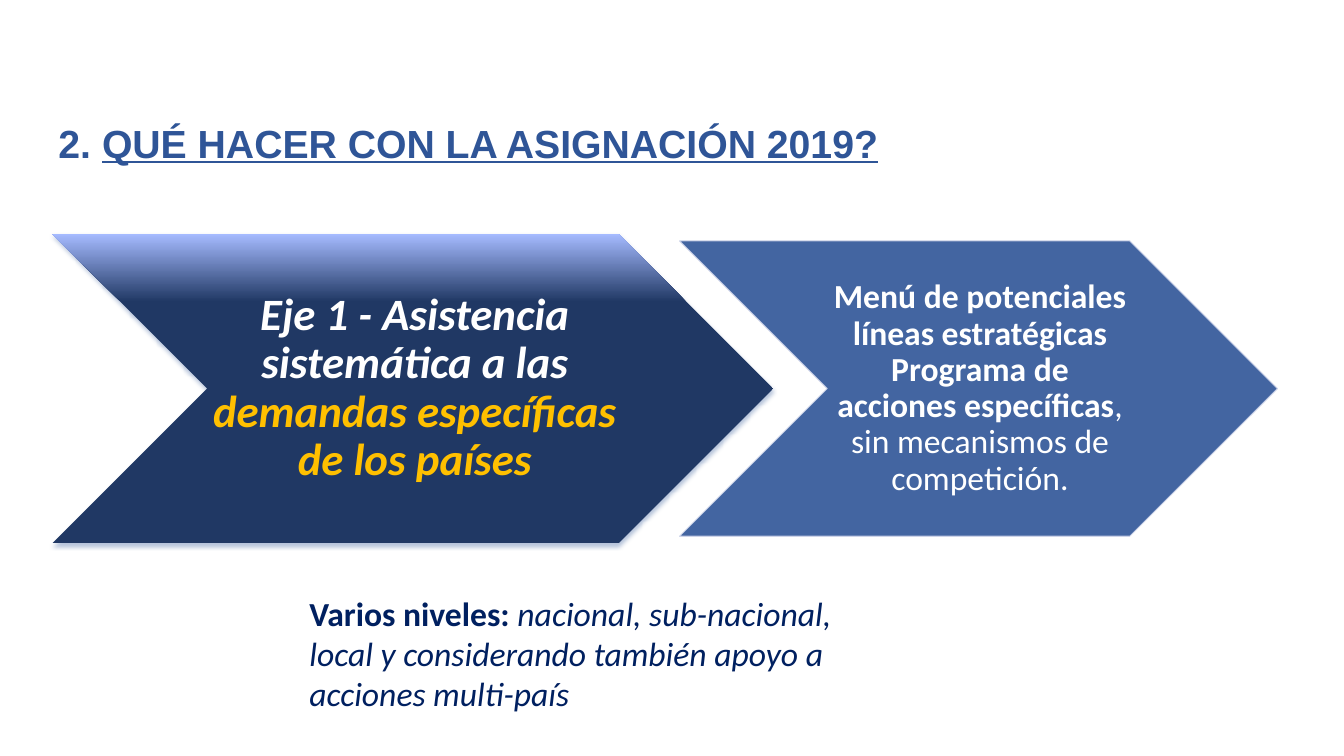
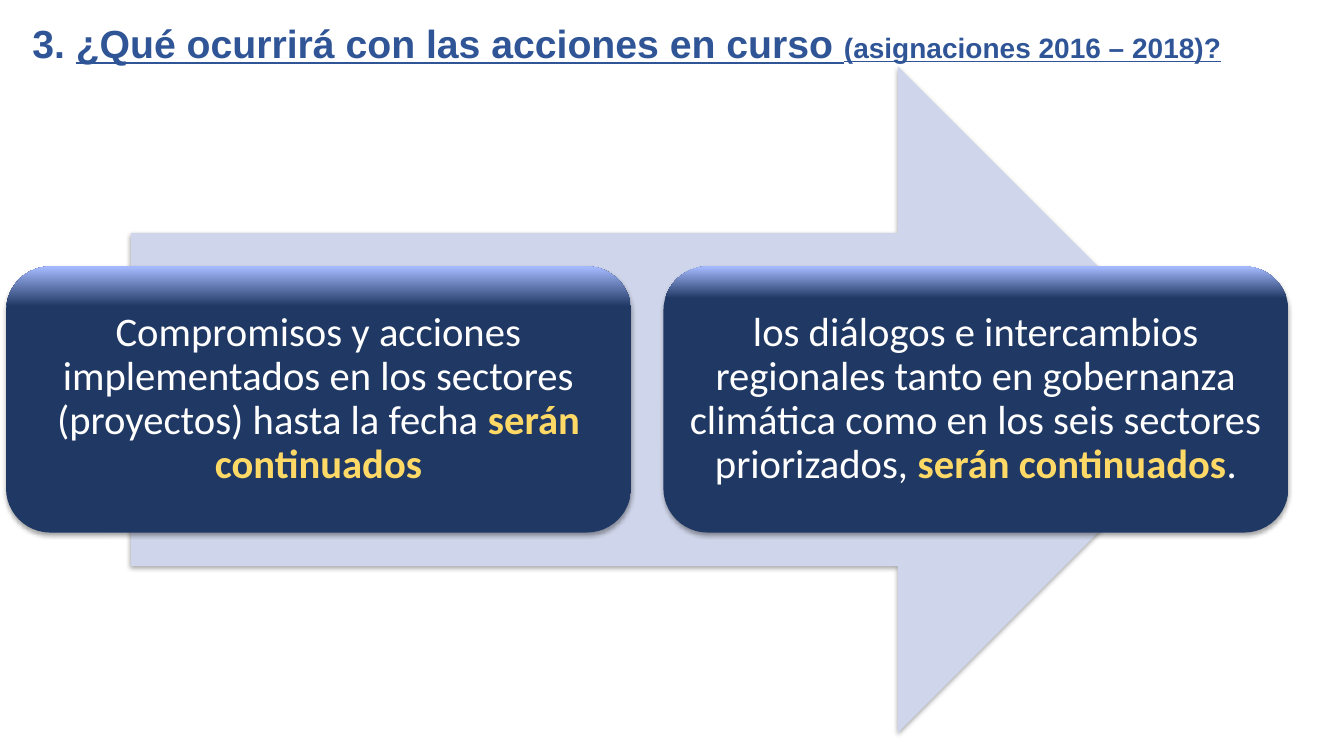
from lxml import etree
from pptx import Presentation
from pptx.dml.color import RGBColor
from pptx.enum.shapes import MSO_SHAPE
from pptx.enum.text import MSO_ANCHOR, MSO_AUTO_SIZE, PP_ALIGN
from pptx.oxml.ns import qn
from pptx.util import Inches, Pt

CHEVRON = MSO_SHAPE.CHEVRON
ARROW = MSO_SHAPE.RIGHT_ARROW
CARD = MSO_SHAPE.ROUNDED_RECTANGLE
TOP, MIDDLE = MSO_ANCHOR.TOP, MSO_ANCHOR.MIDDLE
LEFT, CENTER = PP_ALIGN.LEFT, PP_ALIGN.CENTER

COLORS = {
    "title": "2F5597", "navy": "203864", "glow": "A6BBFF", "pale": "CFD5EA",
    "white": "FFFFFF", "amber": "FFC000", "yellow": "FFD966", "ink": "002060",
    "black": "000000",
}

prs = Presentation()
prs.slide_width, prs.slide_height = Inches(13.33), Inches(7.5)
COL, ROW = prs.slide_width / 100, prs.slide_height / 100


def place(x, y, w, h):
    """Percent of the slide's width and height to lengths."""
    return int(x * COL), int(y * ROW), int(w * COL), int(h * ROW)


def write(tf, runs, font, size, align, anchor, spacing=1.0):
    """Fill a frame with one paragraph of (text, colour, style letters, size)."""
    tf.word_wrap, tf.auto_size, tf.vertical_anchor = True, MSO_AUTO_SIZE.NONE, anchor
    p = tf.paragraphs[0]
    p.alignment, p.line_spacing = align, spacing
    for text, color, style, *own_size in runs:
        r = p.add_run()
        r.text = text
        r.font.name, r.font.size = font, Pt(own_size[0] if own_size else size)
        r.font.bold, r.font.italic = "b" in style, "i" in style
        r.font.underline = "u" in style
        r.font.color.rgb = RGBColor.from_string(COLORS[color])


# Slide titles: box and runs
titles = [
    ((3.6, 15.07, 89.57, 7.6), [
        ("2. ", "title", "b"),
        ("QUÉ HACER CON LA ASIGNACIÓN 2019?", "title", "bu")]),
    ((1.65, 1.87, 94.67, 7.6), [
        ("3. ", "title", "b"),
        ("¿Qué ocurrirá con las acciones en curso ", "title", "bu"),
        ("(asignaciones 2016 – 2018)?", "title", "bu", 20)]),
]
slides = []
for box, runs in titles:
    s = prs.slides.add_slide(prs.slide_layouts[5])
    sp = s.shapes.title
    sp.left, sp.top, sp.width, sp.height = place(*box)
    write(sp.text_frame, runs, "Arial", 28, LEFT, TOP)
    slides.append(s)

# Shapes: slide, kind, left, width, height, start of glow, shadow, insets, size, runs
MID_ROW = (51.4, 52.85)
CARD_LEFT, CARD_STEP, CARD_W, CARD_H = 0.45, 48.91, 46.51, 35.2
CARD_INSETS = (0.12, 0.12, 0.12, 0.12)
shapes = [
    (0, CHEVRON, 3.9, 53.64, 40.93, 0.78, "title", (0.04, 0.02, 0, 0.02), 32, [
        ("Eje 1 - Asistencia sistemática a las ", "white", "bi"),
        ("demandas específicas de los países", "amber", "bi")]),
    (0, CHEVRON, 50.56, 44.49, 39.07, None, None, (0.03, 0.02, 0, 0.02), 24, [
        ("Menú de potenciales líneas estratégicas Programa de acciones específicas",
         "white", "b"),
        (", sin mecanismos de competición.", "white", "")]),
    (1, ARROW, 9.75, 81.85, 88.13, None, "black", CARD_INSETS, 29, []),
    (1, CARD, CARD_LEFT, CARD_W, CARD_H, 0.85, "black", CARD_INSETS, 29, [
        ("Compromisos y acciones implementados en los sectores (proyectos) "
         "hasta la fecha ", "white", ""),
        ("serán continuados", "yellow", "b")]),
    (1, CARD, CARD_LEFT + CARD_STEP, CARD_W, CARD_H, 0.88, "black", CARD_INSETS, 29, [
        ("los diálogos e intercambios regionales tanto en gobernanza climática "
         "como en los seis sectores priorizados, ", "white", ""),
        ("serán continuados", "yellow", "b"),
        (".", "white", "")]),
]
for index, kind, x, w, h, glow, shadow, insets, size, runs in shapes:
    sp = slides[index].shapes.add_shape(kind, *place(x, MID_ROW[index] - h / 2, w, h))
    sp.shadow.inherit = False
    sp.line.fill.background()

    # Fill: glow along the top edge, or one colour
    if glow:
        sp.fill.gradient()
        sp.fill.gradient_angle = 90
        for stop, at, name in zip(sp.fill.gradient_stops, (glow, 1), ("navy", "glow")):
            stop.position = at
            stop.color.rgb = RGBColor.from_string(COLORS[name])
    else:
        sp.fill.solid()
        sp.fill.fore_color.rgb = RGBColor.from_string(
            COLORS["pale" if kind == ARROW else "title"])

    # Soft shadow, or a translucent fill with a thin outline
    spPr = sp.element.spPr
    if shadow:
        outer = etree.SubElement(
            spPr.find(qn("a:effectLst")), qn("a:outerShdw"), blurRad=str(Pt(3.1)),
            dist=str(Pt(1.8)), dir="5400000", rotWithShape="0")
        clr = etree.SubElement(outer, qn("a:srgbClr"), val=COLORS[shadow])
        etree.SubElement(clr, qn("a:alpha"), val="35000")
    else:
        sp.line.width = Pt(0.75)
        sp.line.color.rgb = RGBColor.from_string(COLORS["pale"])
        for clr in spPr.iter(qn("a:srgbClr")):
            etree.SubElement(clr, qn("a:alpha"), val="90000")

    # Text inside the shape
    tf = sp.text_frame
    tf.margin_left, tf.margin_top, tf.margin_right, tf.margin_bottom = map(Inches, insets)
    write(tf, runs, "Calibri", size, CENTER, MIDDLE, 0.9)

# Note under the chevrons
note = slides[0].shapes.add_textbox(*place(22.28, 77.73, 43.44, 17.47))
write(note.text_frame, [
    ("Varios niveles: ", "ink", "b"),
    ("nacional, sub-nacional, local y considerando también apoyo a acciones multi-país",
     "ink", "i")], "Calibri", 24, LEFT, TOP)

prs.save("out.pptx")
